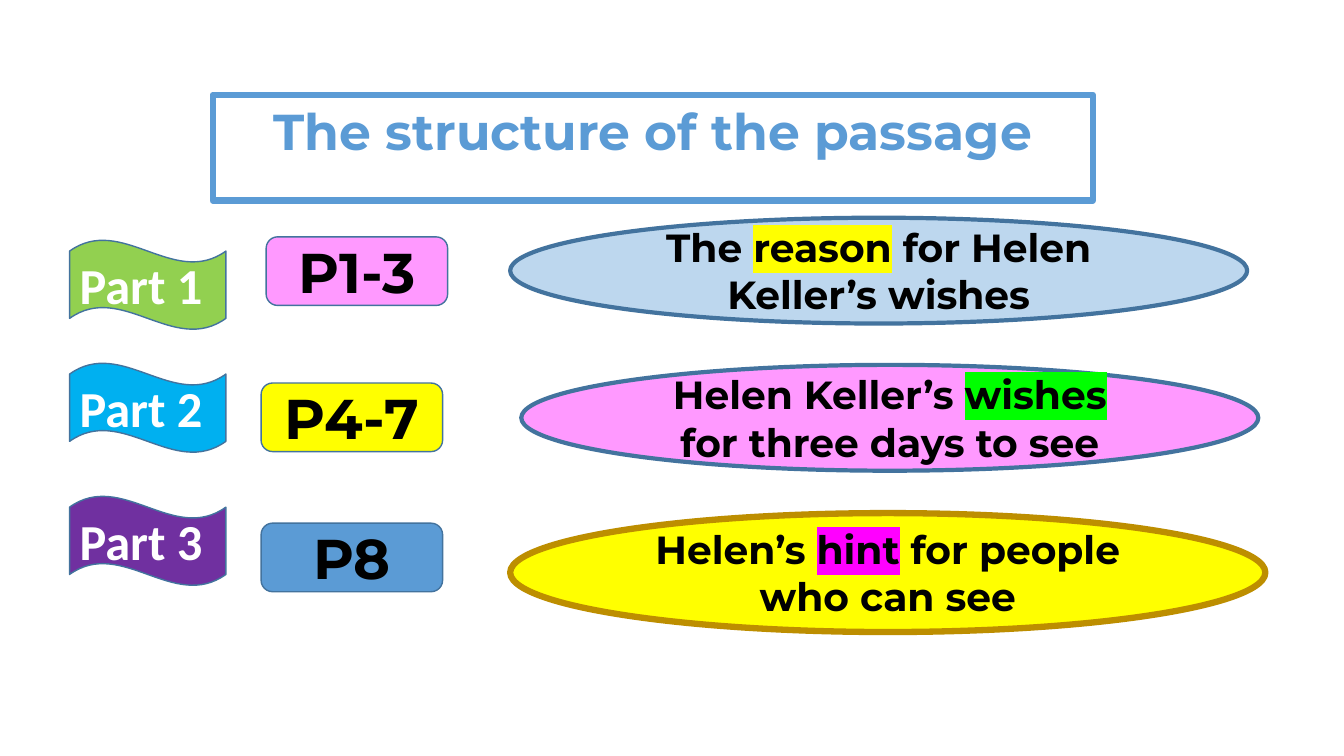
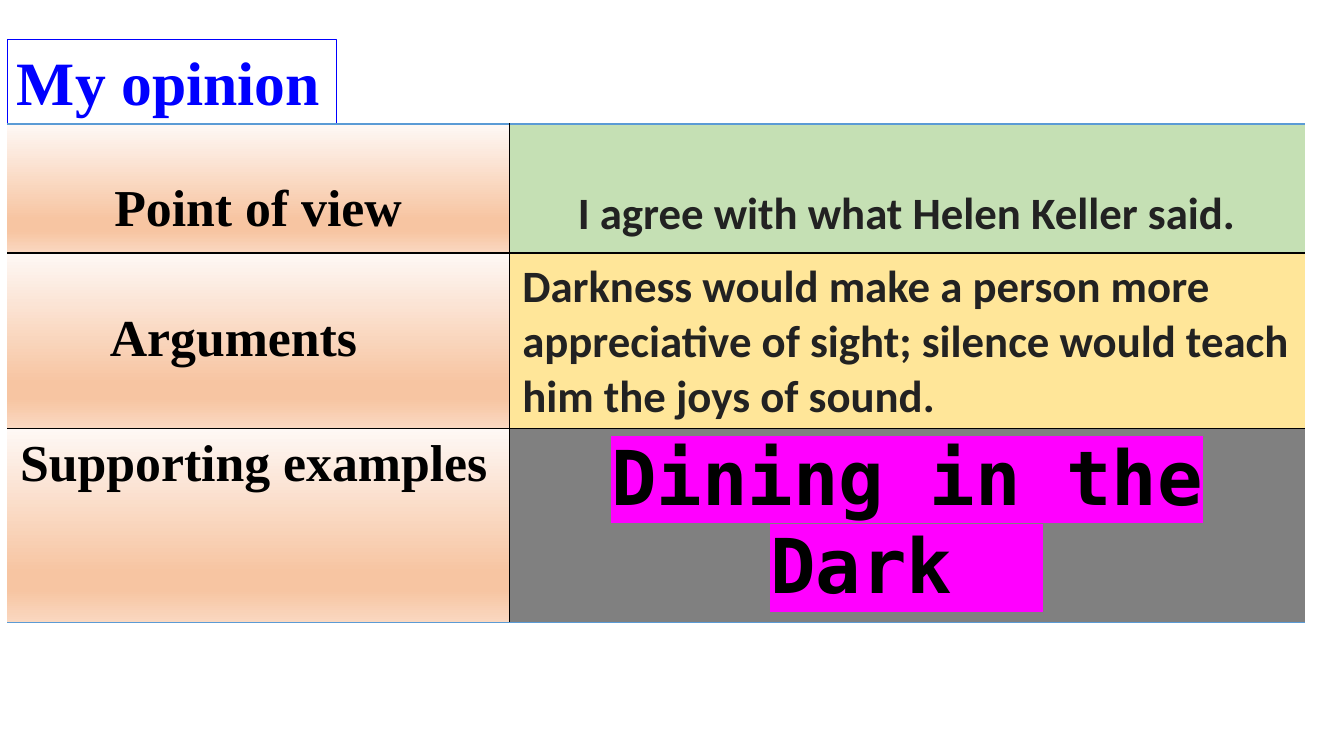
from pptx import Presentation
from pptx.dml.color import RGBColor
from pptx.enum.shapes import MSO_SHAPE
from pptx.enum.text import MSO_ANCHOR, PP_ALIGN
from pptx.oxml import parse_xml
from pptx.oxml.ns import nsdecls, qn
from pptx.util import Inches, Pt

WHITE = RGBColor(0xFF, 0xFF, 0xFF)
BLACK = RGBColor(0x00, 0x00, 0x00)
INK = RGBColor(0x22, 0x22, 0x22)
BLUE = RGBColor(0x5B, 0x9B, 0xD5)
EDGE = RGBColor(0x43, 0x73, 0x9E)
PURE_BLUE = RGBColor(0x00, 0x00, 0xFF)
PALE_BLUE = RGBColor(0xBD, 0xD7, 0xEE)
SKY = RGBColor(0x00, 0xB0, 0xF0)
GREEN = RGBColor(0x92, 0xD0, 0x50)
LIME = RGBColor(0x00, 0xFF, 0x00)
PALE_GREEN = RGBColor(0xC5, 0xE0, 0xB4)
PURPLE = RGBColor(0x70, 0x30, 0xA0)
PINK = RGBColor(0xFF, 0x99, 0xFF)
MAGENTA = RGBColor(0xFF, 0x00, 0xFF)
YELLOW = RGBColor(0xFF, 0xFF, 0x00)
PALE_YELLOW = RGBColor(0xFF, 0xE6, 0x99)
GOLD = RGBColor(0xBD, 0x8E, 0x00)
GREY = RGBColor(0x80, 0x80, 0x80)
PEACH = [
    (0, RGBColor(0xFE, 0xF8, 0xF5)),
    (74, RGBColor(0xF7, 0xC5, 0xA2)),
    (83, RGBColor(0xF7, 0xC5, 0xA2)),
    (100, RGBColor(0xFA, 0xD8, 0xC1)),
]

SANS, SERIF, BODY, MONO = "Montserrat", "Times New Roman", "Calibri", "DejaVu Sans Mono"
LEFT, CENTER = PP_ALIGN.LEFT, PP_ALIGN.CENTER

FLAGS = [("Part 1", GREEN, 2.38), ("Part 2", SKY, 3.6), ("Part 3", PURPLE, 4.92)]
RANGES = [
    ("P1-3", PINK, 2.64, 2.35),
    ("P4-7", YELLOW, 2.59, 3.8),
    ("P8", BLUE, 2.59, 5.19),
]
IDEAS = [
    (("The ", "reason", " for Helen Keller’s wishes"), YELLOW,
     (5.06, 2.16, 7.31, 1.05), PALE_BLUE, EDGE, 3),
    (("Helen Keller’s ", "wishes", " for three days to see"), LIME,
     (5.17, 3.62, 7.31, 1.05), PINK, EDGE, 3),
    (("Helen’s ", "hint", " for people who can see"), MAGENTA,
     (5.06, 5.09, 7.49, 1.18), YELLOW, GOLD, 4.5),
]

COLUMN_WIDTHS = [4.98, 7.89]
ROW_HEIGHTS = [1.28, 1.74, 1.93]
SIDE, TOP, BOTTOM = 0.13, 0.07, 0.04
LABELS = [
    ("Point of view", CENTER, SIDE, 0.56),
    ("Arguments", LEFT, 1.02, 0.57),
    ("Supporting examples", LEFT, SIDE, TOP),
]
ANSWERS = [
    ("I agree with what Helen Keller said.", CENTER, 0.62, BODY, 32, INK, PALE_GREEN, None),
    ("Darkness would make a person more appreciative of sight; "
     "silence would teach him the joys of sound.",
     LEFT, TOP, BODY, 32, INK, PALE_YELLOW, None),
    ("Dining in the Dark  ", CENTER, TOP, MONO, 54, BLACK, GREY, MAGENTA),
]


def write(frame, pieces, font, size, color, align=CENTER, marker=None, marked=0):
    """Fill a text frame with bold pieces, highlighting the one at index marked."""
    para = frame.paragraphs[0]
    para.alignment = align
    for index, piece in enumerate(pieces):
        span = para.add_run()
        span.text = piece
        span.font.name, span.font.size, span.font.bold = font, Pt(size), True
        span.font.color.rgb = color
        if marker is not None and index == marked:
            highlight = parse_xml(
                f'<a:highlight {nsdecls("a")}><a:srgbClr val="{marker}"/></a:highlight>')
            span.font.fill
            span._r.rPr.find(qn("a:solidFill")).addnext(highlight)


def add_box(page, kind, place, fill, line, width, anchor=MSO_ANCHOR.MIDDLE):
    """Add a filled, outlined shape and return its text frame."""
    box = page.shapes.add_shape(kind, *map(Inches, place))
    box.shadow.inherit = False
    box.fill.solid()
    box.fill.fore_color.rgb = fill
    box.line.color.rgb = line
    box.line.width = Pt(width)
    box.text_frame.word_wrap = True
    box.text_frame.vertical_anchor = anchor
    return box.text_frame


def set_borders(cell, colors):
    """Draw the cell's left, right, top and bottom edges; None hides an edge."""
    properties = cell._tc.get_or_add_tcPr()
    for index, (side, color) in enumerate(zip("LRTB", colors)):
        paint = ("<a:noFill/>" if color is None else
                 f'<a:solidFill><a:srgbClr val="{color}"/></a:solidFill>')
        properties.insert(index, parse_xml(
            f'<a:ln{side} {nsdecls("a")} w="{Pt(1)}">{paint}</a:ln{side}>'))


def fill_gradient(cell, stops):
    """Fill the cell with a gradient from top to bottom."""
    marks = "".join(f'<a:gs pos="{position * 1000}"><a:srgbClr val="{color}"/></a:gs>'
                    for position, color in stops)
    cell._tc.get_or_add_tcPr().append(parse_xml(
        f'<a:gradFill {nsdecls("a")}><a:gsLst>{marks}</a:gsLst>'
        '<a:lin ang="5400000" scaled="0"/></a:gradFill>'))


def set_margins(cell, left, top):
    """Set the insets of a table cell."""
    cell.margin_left, cell.margin_right = Inches(left), Inches(SIDE)
    cell.margin_top, cell.margin_bottom = Inches(top), Inches(BOTTOM)


def build_structure(page):
    """Show the parts of the passage with their paragraphs and ideas."""
    frame = add_box(page, MSO_SHAPE.RECTANGLE, (2.11, 0.94, 8.73, 1.05),
                    WHITE, BLUE, 4.5, MSO_ANCHOR.TOP)
    write(frame, ["The structure of the passage"], SANS, 36, BLUE)
    for text, fill, top in FLAGS:
        frame = add_box(page, MSO_SHAPE.WAVE, (0.69, top, 1.55, 0.89), fill, EDGE, 1)
        write(frame, [text], BODY, 36, WHITE, LEFT)
    for text, fill, left, top in RANGES:
        frame = add_box(page, MSO_SHAPE.ROUNDED_RECTANGLE, (left, top, 1.8, 0.68),
                        fill, EDGE, 1)
        write(frame, [text], SANS, 40, BLACK)
    for pieces, marker, place, fill, line, width in IDEAS:
        frame = add_box(page, MSO_SHAPE.OVAL, place, fill, line, width)
        write(frame, pieces, SANS, 28, BLACK, marker=marker, marked=1)


def build_opinion(page):
    """Show the opinion table under its title."""
    frame = add_box(page, MSO_SHAPE.RECTANGLE, (0.07, 0.39, 3.27, 0.84),
                    WHITE, PURE_BLUE, 0.75, MSO_ANCHOR.TOP)
    write(frame, ["My opinion"], SERIF, 44, PURE_BLUE, LEFT)
    place = (0.07, 1.23, sum(COLUMN_WIDTHS), sum(ROW_HEIGHTS))
    table = page.shapes.add_table(len(ROW_HEIGHTS), len(COLUMN_WIDTHS),
                                  *map(Inches, place)).table
    table.first_row = table.horz_banding = False
    for column, width in zip(table.columns, COLUMN_WIDTHS):
        column.width = Inches(width)
    last = len(ROW_HEIGHTS) - 1
    for index, (label, answer) in enumerate(zip(LABELS, ANSWERS)):
        table.rows[index].height = Inches(ROW_HEIGHTS[index])
        label_cell, answer_cell = table.cell(index, 0), table.cell(index, 1)
        edges = (BLUE if index == 0 else BLACK, BLUE if index == last else BLACK)

        text, align, left, top = label
        set_margins(label_cell, left, top)
        write(label_cell.text_frame, [text], SERIF, 37, BLACK, align)
        fill_gradient(label_cell, PEACH)
        set_borders(label_cell, (None, BLACK, *edges))

        text, align, top, font, size, color, fill, marker = answer
        set_margins(answer_cell, SIDE, top)
        write(answer_cell.text_frame, [text], font, size, color, align, marker)
        answer_cell.fill.solid()
        answer_cell.fill.fore_color.rgb = fill
        set_borders(answer_cell, (BLACK, None, *edges))


def main():
    """Build and save the deck."""
    deck = Presentation()
    deck.slide_width, deck.slide_height = Inches(13.33), Inches(7.5)
    for build in (build_structure, build_opinion):
        build(deck.slides.add_slide(deck.slide_layouts[6]))
    deck.save("out.pptx")


if __name__ == "__main__":
    main()
